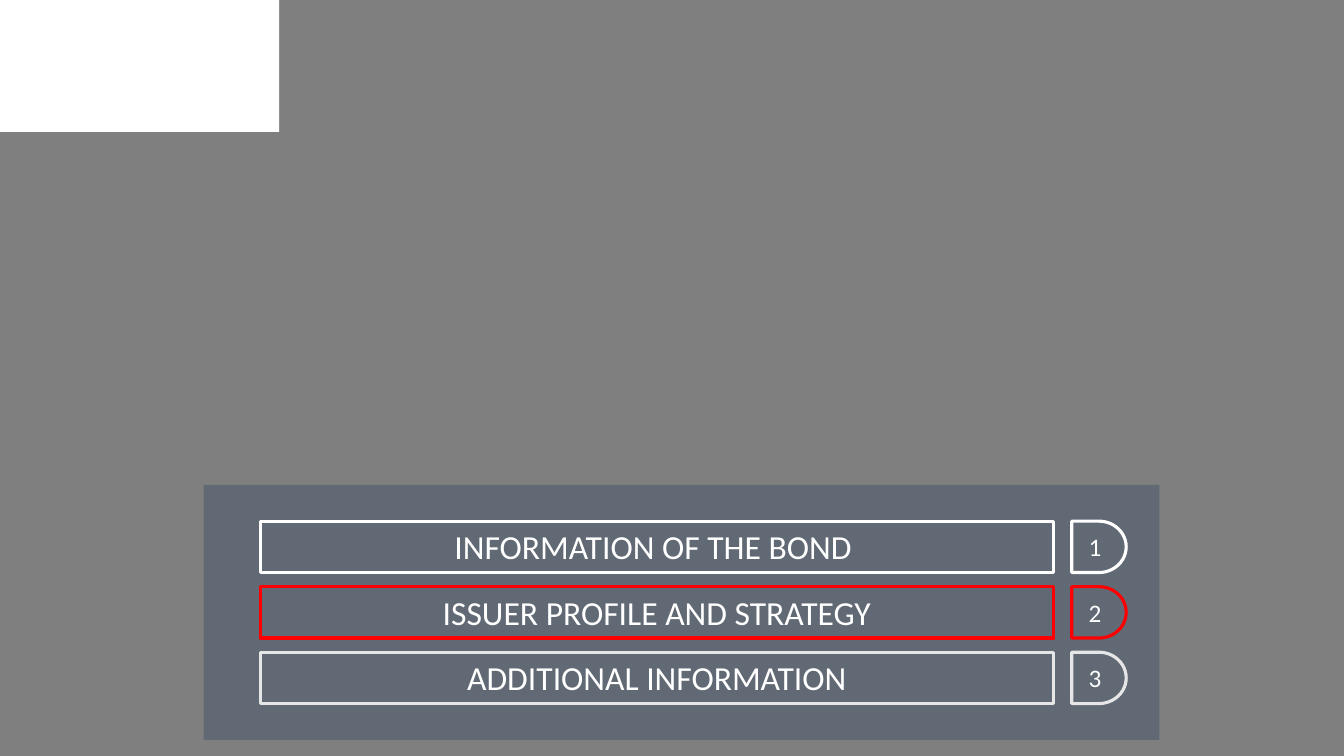
from pptx import Presentation
from pptx.dml.color import RGBColor
from pptx.enum.shapes import MSO_SHAPE
from pptx.enum.text import MSO_ANCHOR, PP_ALIGN
from pptx.oxml.ns import qn
from pptx.util import Inches, Pt
from lxml import etree

COLORS = {
    "shade": "000000",
    "panel": "44546A",
    "white": "FFFFFF",
    "active": "FF0000",
    "pale": "E7E6E6",
}


class Deck:
    font = "Calibri"
    border = 2.25

    def __init__(self, slide):
        self.slide = slide

    def color(self, name):
        return RGBColor.from_string(COLORS[name])

    def shape(self, kind, box):
        item = self.slide.shapes.add_shape(kind, *map(Inches, box))
        item.shadow.inherit = False
        return item

    def block(self, box, fill, alpha=100):
        """Draw a borderless rectangle; alpha is its opacity in percent."""
        item = self.shape(MSO_SHAPE.RECTANGLE, box)
        item.line.fill.background()
        item.fill.solid()
        item.fill.fore_color.rgb = self.color(fill)
        if alpha < 100:
            tint = item.fill._xPr.find(qn("a:solidFill"))[0]
            etree.SubElement(tint, qn("a:alpha"), val=str(alpha * 1000))

    def frame(self, kind, box, text, size, line, anchor):
        """Draw an unfilled outline with centred white text."""
        item = self.shape(kind, box)
        item.fill.background()
        item.line.color.rgb = self.color(line)
        item.line.width = Pt(self.border)
        body = item.text_frame
        body.word_wrap = True
        body.vertical_anchor = anchor
        body.text = text
        para = body.paragraphs[0]
        para.alignment = PP_ALIGN.CENTER
        font = para.runs[0].font
        font.name = self.font
        font.size = Pt(size)
        font.color.rgb = self.color("white")


def main():
    show = Presentation()
    show.slide_width = Inches(13.33)
    show.slide_height = Inches(7.5)
    deck = Deck(show.slides.add_slide(show.slide_layouts[6]))

    deck.block((0, 0, 13.33, 7.5), "shade", 50)
    deck.block((0, 0, 2.77, 1.31), "white")
    deck.block((2.02, 4.81, 9.48, 2.53), "panel", 50)

    topics = [
        ("INFORMATION OF THE BOND ", "white"),
        ("ISSUER PROFILE AND STRATEGY", "active"),
        ("ADDITIONAL INFORMATION", "pale"),
    ]
    top, step, height = 5.17, 0.65, 0.51
    for index, (topic, line) in enumerate(topics):
        y = top + index * step
        deck.frame(MSO_SHAPE.RECTANGLE, (2.58, y, 7.87, height),
                   topic, 24, line, MSO_ANCHOR.TOP)
        deck.frame(MSO_SHAPE.FLOWCHART_DELAY, (10.63, y, 0.54, height),
                   str(index + 1), 18, line, MSO_ANCHOR.MIDDLE)

    show.save("out.pptx")


if __name__ == "__main__":
    main()
